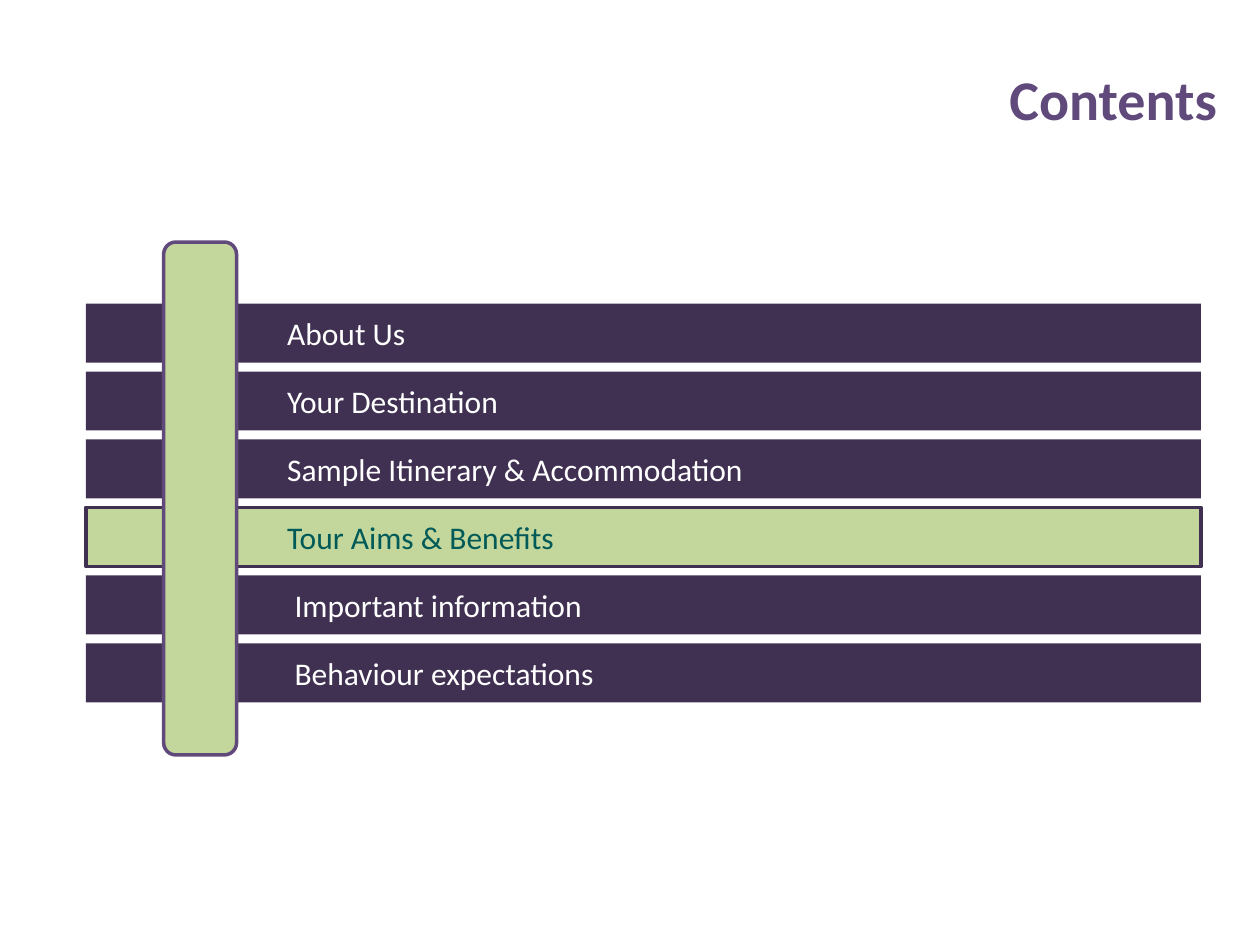
"""Build a contents slide with one highlighted entry."""
from dataclasses import dataclass
from typing import Any

from pptx import Presentation
from pptx.dml.color import RGBColor
from pptx.enum.shapes import MSO_SHAPE
from pptx.enum.text import MSO_ANCHOR, MSO_AUTO_SIZE, PP_ALIGN
from pptx.util import Cm, Pt

COLORS = {"dark": "403152", "green": "C3D69B", "purple": "604A7B",
          "teal": "005A58", "white": "FFFFFF"}
TOP, STEP = 6.12, 1.37
TITLE = {"name": "Calibri", "size": Pt(32), "bold": True}
LABEL = {"name": "Calibri", "size": Pt(18), "bold": False}
FRAME = {"word_wrap": True, "auto_size": MSO_AUTO_SIZE.NONE,
         "vertical_anchor": MSO_ANCHOR.MIDDLE}


@dataclass
class Box:
    left: float
    top: float
    width: float
    height: float
    fill: str
    line: str = ""
    kind: MSO_SHAPE = MSO_SHAPE.RECTANGLE


@dataclass
class Entry:
    text: str
    indent: float = 4.06
    active: bool = False


ENTRIES = [
    Entry("About Us"),
    Entry("Your Destination"),
    Entry("Sample Itinerary & Accommodation"),
    Entry("Tour Aims & Benefits", active=True),
    Entry("Important information", 4.21),
    Entry("Behaviour expectations", 4.21),
]


def color(name: str) -> RGBColor:
    return RGBColor.from_string(COLORS[name])


def apply(target: Any, values: dict[str, Any]) -> None:
    for name, value in values.items():
        setattr(target, name, value)


def write(shape: Any, text: str, style: dict[str, Any], tint: str,
          align: PP_ALIGN) -> None:
    frame = shape.text_frame
    apply(frame, FRAME)
    frame.text = text
    line = frame.paragraphs[0]
    line.alignment = align
    font = line.runs[0].font
    apply(font, style)
    font.color.rgb = color(tint)


def draw(slide: Any, box: Box) -> Any:
    shape = slide.shapes.add_shape(
        box.kind, Cm(box.left), Cm(box.top), Cm(box.width), Cm(box.height))
    shape.shadow.inherit = False
    shape.fill.solid()
    shape.fill.fore_color.rgb = color(box.fill)
    if box.line:
        shape.line.color.rgb = color(box.line)
        shape.line.width = Pt(2)
    else:
        shape.line.fill.background()
    return shape


def add_entry(slide: Any, row: int, entry: Entry) -> None:
    fill, line, tint = (("green", "dark", "teal") if entry.active
                        else ("dark", "", "white"))
    bar = draw(slide, Box(1.73, TOP + row * STEP, 22.48, 1.19, fill, line))
    bar.text_frame.margin_left = Cm(entry.indent)
    write(bar, entry.text, LABEL, tint, PP_ALIGN.LEFT)


def main() -> None:
    deck = Presentation()
    apply(deck, {"slide_width": Cm(25.4), "slide_height": Cm(19.05)})
    slide = deck.slides.add_slide(deck.slide_layouts[5])
    title = slide.shapes.title
    apply(title, {"left": Cm(11.25), "top": Cm(1.17),
                  "width": Cm(13.54), "height": Cm(1.63)})
    write(title, "Contents", TITLE, "purple", PP_ALIGN.RIGHT)
    for row, entry in enumerate(ENTRIES):
        add_entry(slide, row, entry)
    draw(slide, Box(3.3, 4.88, 1.47, 10.34, "green", "purple",
                    MSO_SHAPE.ROUNDED_RECTANGLE))
    deck.save("out.pptx")


if __name__ == "__main__":
    main()
